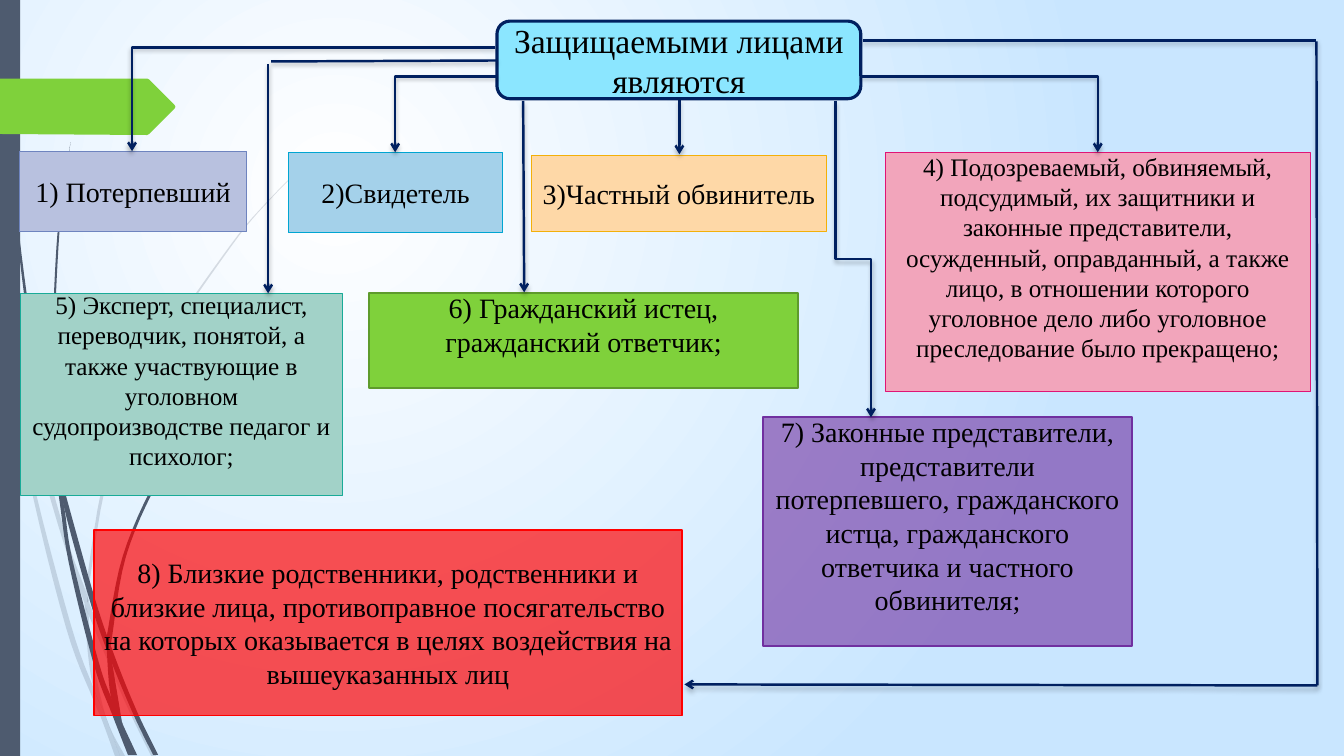
from dataclasses import dataclass
from itertools import chain
from typing import NamedTuple

from lxml import etree
from pptx import Presentation
from pptx.dml.color import RGBColor
from pptx.enum.shapes import MSO_CONNECTOR, MSO_SHAPE
from pptx.enum.text import MSO_ANCHOR, PP_ALIGN
from pptx.oxml.ns import qn
from pptx.util import Inches, Pt

CELL = Inches(0.1)  # one column or row of the grid
COLUMNS, ROWS = 133.33, 75
RECTANGLE, ROUNDED = MSO_SHAPE.RECTANGLE, MSO_SHAPE.ROUNDED_RECTANGLE
STRAIGHT, ELBOW = MSO_CONNECTOR.STRAIGHT, MSO_CONNECTOR.ELBOW
CENTER, MIDDLE = PP_ALIGN.CENTER, MSO_ANCHOR.MIDDLE
FONT = "Times New Roman"
NAVY, SLATE, GREEN, BLACK = "002060", "4E5B6F", "7FD13B", "000000"
LINE, CORNER, STEP = "line", "bentConnector2", "bentConnector3"

Point = tuple[float, float]


@dataclass
class Card:
    text: str
    left: float
    top: float
    width: float
    height: float
    fill: str
    border: str
    size: float = 20
    border_width: float = 0.75
    opacity: int = 100
    lines_below: int = 0
    outline: int = RECTANGLE


class Route(NamedTuple):
    start: Point
    end: Point
    kind: str = LINE
    arrow: bool = True


class Strand(NamedTuple):
    """A blade of grass: one edge going down, the other going back up."""
    down: list[Point]
    up: list[Point]
    opacity: int


CARDS = [
    Card("Защищаемыми лицами являются", 49.3, 2.1, 36.1, 7.7, "8BE6FF", NAVY, 24, 2.25,
         outline=ROUNDED),
    Card("1) Потерпевший", 1.9, 15, 22.6, 8, "B8C1DF", "6E84BF"),
    Card("2)Свидетель", 28.6, 15.1, 21.3, 8, "A4D1EA", "00A5D2"),
    Card("3)Частный обвинитель", 52.7, 15.4, 29.3, 7.6, "FED8A7", "F3B00A"),
    Card("4) Подозреваемый, обвиняемый, подсудимый, их защитники и законные представители, "
         "осужденный, оправданный, а также лицо, в отношении которого уголовное дело либо "
         "уголовное преследование было прекращено;",
         87.8, 15.1, 42.2, 23.7, "F2A5BB", "E01475", 18, lines_below=1),
    Card("5) Эксперт, специалист, переводчик, понятой, а также участвующие в уголовном "
         "судопроизводстве педагог и психолог;",
         2, 29.1, 32, 20.1, "A2D2C8", "19AB98", 18, lines_below=1),
    Card("6) Гражданский истец, гражданский ответчик;",
         36.6, 29.1, 42.6, 9.4, GREEN, "5E9B2C", border_width=1.25, lines_below=1),
    Card("7) Законные представители, представители потерпевшего, гражданского истца, "
         "гражданского ответчика и частного обвинителя;",
         75.7, 41.4, 36.6, 22.7, "7030A0", "7030A0", border_width=1.25, opacity=60,
         lines_below=1),
    Card("8) Близкие родственники, родственники и близкие лица, противоправное посягательство "
         "на которых оказывается в целях воздействия на вышеуказанных лиц",
         9.3, 52.6, 58.4, 18.4, "FF0000", "FF0000", border_width=1.25, opacity=68),
]

ROUTES = [
    Route((49.1, 4.7), (13.1, 15), CORNER),
    Route((49.3, 7.6), (39.2, 15.1), CORNER),
    Route((67.4, 9.9), (67.4, 15.3)),
    Route((85.4, 7.6), (108.9, 15.1), CORNER),
    Route((49.3, 6), (26.9, 6.1), arrow=False),
    Route((26.6, 6.4), (26.6, 29.1)),
    Route((51.9, 10), (52, 29)),
    Route((82.9, 10), (86.4, 41.4), STEP),
    Route((85.6, 4), (130.6, 4), arrow=False),
    Route((130.6, 4.1), (130.7, 68), arrow=False),
    Route((130.7, 68), (67.9, 67.9)),
]

STRANDS = [
    Strand([(0, 29.9), (1, 34.4), (2.8, 47), (6.5, 62.1), (9.2, 69.3), (10.1, 71.4), (11.4, 75)],
           [(11.9, 75), (10.5, 71.1), (9.3, 68.3), (7, 61.9), (3.1, 46.9), (1.7, 37.6),
            (0.9, 32.2), (0, 28.2)], 20),
    Strand([(1.4, 34.5), (1.7, 37.6), (5.8, 52.2), (8.4, 59.9), (8.8, 61), (12.3, 69.4), (15, 75)],
           [(15.5, 75), (12.7, 69.2), (9.2, 60.7), (8.5, 58.6), (6.2, 52), (1.4, 34.5)], 20),
    Strand([(8.4, 59.9), (8.7, 64.6), (9.3, 68.3), (10.5, 71.1), (11.9, 75)],
           [(12.4, 75), (10.5, 71.1), (9.1, 64.6), (8.8, 61)], 20),
    Strand([(31.2, 15.3), (26.8, 19.7), (22.8, 24.4), (15.8, 34.8), (10.7, 46.1), (8.5, 58.4)],
           [(8.8, 59.6), (8.8, 58.4), (11, 46.2), (16, 34.9), (22.9, 24.5), (26.8, 19.8),
            (31.2, 15.4)], 20),
    Strand([(0.3, 0), (0.3, 4.8), (0.7, 11), (1.7, 23.3), (3.3, 35.5), (5.6, 47.7), (6.8, 55.7),
            (9.3, 65.9), (11.1, 70.8), (12.7, 74.9)],
           [(13.6, 74.9), (12.2, 71.9), (11, 69.1), (9.8, 65.7), (7.2, 55.6), (6.4, 50.5),
            (5.5, 45.3), (3.6, 35.5), (1.9, 23.2), (0.8, 10.9), (0.5, 4.8), (0.3, 0)], 100),
    Strand([(6, 47.2), (6.4, 50.5), (8.8, 59.2), (10.6, 64.5), (13.2, 70.8), (15.2, 74.9)],
           [(15.7, 74.9), (13.6, 70.6), (11.3, 64.9), (9.3, 59), (6, 47.2)], 100),
    Strand([(7, 14.1), (6.2, 19.3), (5.6, 24.5), (5.2, 34.9), (5.5, 44.9), (6.4, 50.5)],
           [(6, 47.2), (5.8, 45.3), (5.4, 34.9), (5.8, 24.5), (6.3, 19.3), (7, 14.1)], 100),
    Strand([(26, 34.4), (23.1, 37.3), (20.4, 40.5), (15.6, 47.4), (12.2, 55.1), (10.6, 63.1)],
           [(11, 64.1), (11.1, 63.3), (12.5, 55.2), (15.8, 47.6), (20.5, 40.6), (23.1, 37.4),
            (26.1, 34.4)], 100),
    Strand([(10.6, 64.5), (11, 69.1), (12.2, 71.9)],
           [(12.1, 71.6), (11.1, 65.6), (10.6, 63.1)], 100),
]

BANNER = [(-0.1, 7.8), (14.6, 7.8), (14.8, 7.9), (17.3, 10.4), (17.4, 10.6), (17.3, 10.8),
          (14.8, 13.3), (14.6, 13.4), (-0.1, 13.3)]


def cells(*counts: float) -> list[int]:
    return [round(count * CELL) for count in counts]


def color(code: str) -> RGBColor:
    return RGBColor.from_string(code)


def paint(shape, fill: str, opacity: int = 100) -> None:
    shape.shadow.inherit = False
    shape.fill.solid()
    shape.fill.fore_color.rgb = color(fill)
    shape.line.fill.background()
    if opacity < 100:
        tint = shape.fill._xPr.find(qn("a:solidFill"))[0]
        etree.SubElement(tint, qn("a:alpha"), val=str(opacity * 1000))


def smooth(points: list[Point], steps: int = 6) -> list[Point]:
    """Return points along a Catmull-Rom curve through the given ones."""
    padded = [points[0], *points, points[-1]]
    curve = [points[0]]
    for a, b, c, d in zip(padded, padded[1:], padded[2:], padded[3:]):
        for t in (step / steps for step in range(1, steps + 1)):
            curve.append(tuple(
                q + t * ((r - p) + t * ((2 * p - 5 * q + 4 * r - s) + t * (3 * q - p - 3 * r + s))) / 2
                for p, q, r, s in zip(a, b, c, d)))
    return curve


def draw_outline(shapes, points: list[Point], fill: str, opacity: int = 100) -> None:
    first, *others = [tuple(cells(*point)) for point in points]
    builder = shapes.build_freeform(*first, scale=1.0)
    builder.add_line_segments(others, close=True)
    paint(builder.convert_to_shape(), fill, opacity)


def draw_card(shapes, card: Card) -> None:
    box = shapes.add_shape(card.outline, *cells(card.left, card.top, card.width, card.height))
    paint(box, card.fill, card.opacity)
    box.line.color.rgb = color(card.border)
    box.line.width = Pt(card.border_width)
    frame = box.text_frame
    frame.word_wrap = True
    frame.vertical_anchor = MIDDLE
    frame.margin_bottom = Inches(0.05) + Pt(card.lines_below * card.size * 1.15)
    frame.text = card.text
    para = frame.paragraphs[0]
    para.alignment = CENTER
    font = para.runs[0].font
    font.name, font.size, font.color.rgb = FONT, Pt(card.size), color(BLACK)


def draw_route(shapes, route: Route) -> None:
    start, end, turn = route.start, route.end, 0
    if route.kind == CORNER and end[0] < start[0]:
        start, end, turn = end, start, 180
    elif route.kind == STEP:
        # The step runs downwards, so its frame lies on its side around the same centre.
        x, y = (start[0] + end[0]) / 2, (start[1] + end[1]) / 2
        across, along = (end[0] - start[0]) / 2, (end[1] - start[1]) / 2
        start, end, turn = (x + along, y - across), (x - along, y + across), 270
    connector = shapes.add_connector(STRAIGHT if route.kind == LINE else ELBOW,
                                     *cells(*start, *end))
    connector.line.color.rgb = color(NAVY)
    connector.line.width = Pt(1.75)
    properties = connector._element.spPr
    if turn:
        properties.find(qn("a:xfrm")).set("rot", str(turn * 60000))
    properties.find(qn("a:prstGeom")).set("prst", route.kind)
    if route.arrow:
        etree.SubElement(properties.find(qn("a:ln")), qn("a:tailEnd"), type="arrow")
    effects = etree.SubElement(properties, qn("a:effectLst"))
    shadow = etree.SubElement(effects, qn("a:outerShdw"), blurRad=str(Pt(3)), dist=str(Pt(2)),
                              dir="5400000", rotWithShape="0")
    tint = etree.SubElement(shadow, qn("a:srgbClr"), val=BLACK)
    etree.SubElement(tint, qn("a:alpha"), val="25000")


def draw_background(slide) -> None:
    fill = slide.background.fill
    fill.gradient()
    for stop, code in zip(fill.gradient_stops, ("FFFFFF", "C9E6FF")):
        stop.color.rgb = color(code)
    gradient = next(slide._element.iter(qn("a:gradFill")))
    gradient.remove(gradient.find(qn("a:lin")))
    circle = etree.SubElement(gradient, qn("a:path"))
    circle.set("path", "circle")
    etree.SubElement(circle, qn("a:fillToRect"), l="50000", t="50000", r="100000", b="100000")


def main() -> None:
    deck = Presentation()
    deck.slide_width, deck.slide_height = cells(COLUMNS, ROWS)
    slide = deck.slides.add_slide(deck.slide_layouts[6])
    shapes = slide.shapes
    draw_background(slide)
    for strand in STRANDS:
        edges = chain(smooth(strand.down), smooth(strand.up))
        draw_outline(shapes, list(edges), SLATE, strand.opacity)
    paint(shapes.add_shape(RECTANGLE, *cells(0, 0, 2, ROWS)), SLATE)
    draw_outline(shapes, BANNER, GREEN)
    for card in CARDS:
        draw_card(shapes, card)
    for route in ROUTES:
        draw_route(shapes, route)
    deck.save("out.pptx")


if __name__ == "__main__":
    main()
